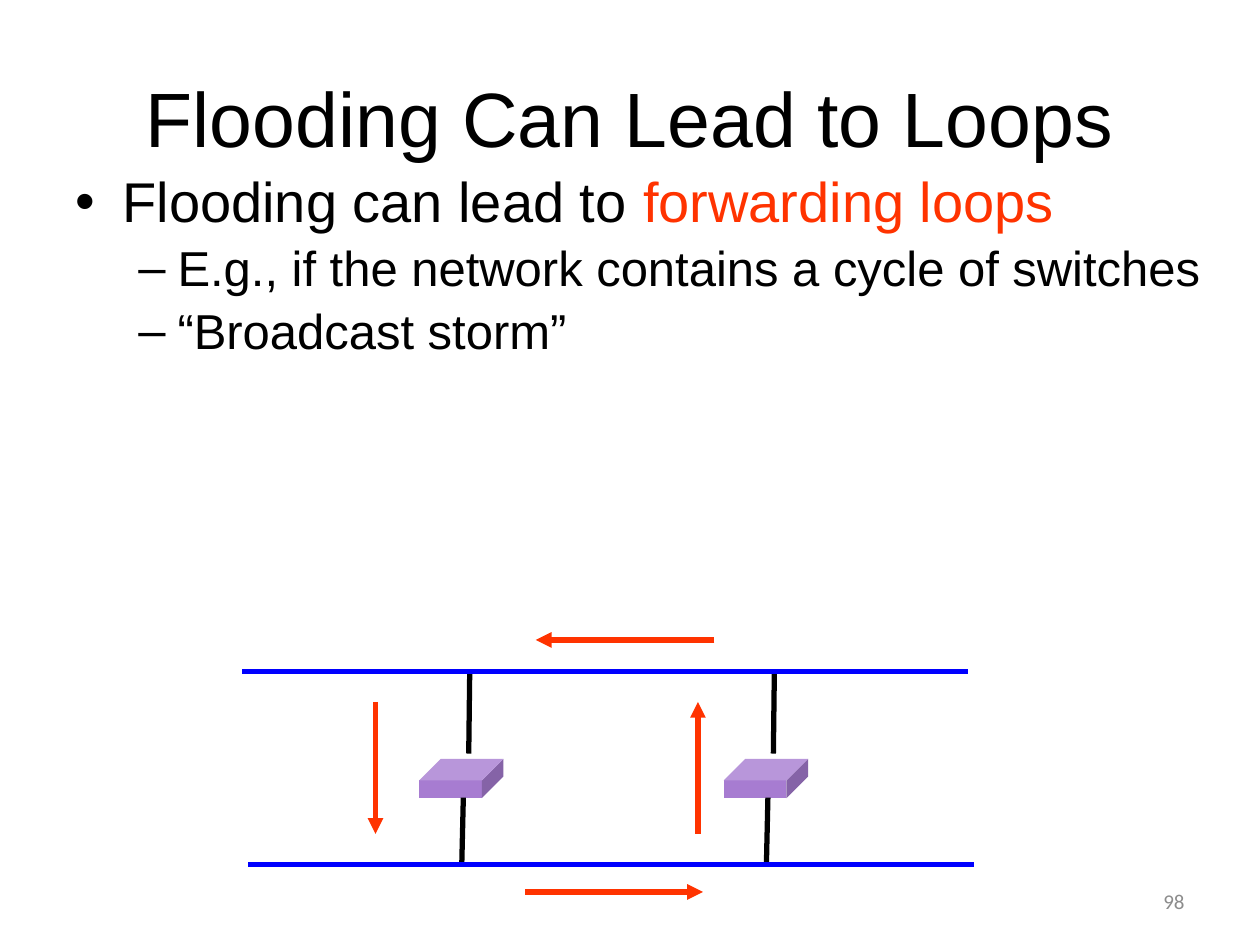
from lxml import etree
from pptx import Presentation, util as u
from pptx.dml.color import RGBColor
from pptx.enum import shapes, text
from pptx.oxml import ns

RED, BLUE, BLACK = "FF3300", "0000FF", "000000"


def paint(font, tint, size, name="Arial"):
    font.color.rgb = RGBColor.from_string(tint)
    font.size = u.Pt(size)
    font.name = name


def draw(x1, y1, x2, y2, tint, arrow=False):
    """Draw a 3 pt line between two points in cm, with an optional arrowhead."""
    line = slide.shapes.add_connector(
        shapes.MSO_CONNECTOR.STRAIGHT, u.Cm(x1), u.Cm(y1), u.Cm(x2), u.Cm(y2))
    line.line.color.rgb = RGBColor.from_string(tint)
    line.line.width = u.Pt(3)
    if arrow:
        etree.SubElement(line.line._get_or_add_ln(), ns.qn("a:tailEnd"), type="triangle")
    etree.SubElement(line._element.spPr, ns.qn("a:effectLst"))


deck = Presentation()
deck.slide_width, deck.slide_height = u.Cm(25.4), u.Cm(19.05)
slide = deck.slides.add_slide(deck.slide_layouts[6])

# Title and page number
labels = [
    ("Flooding Can Lead to Loops", (1.27, 0.76, 22.86, 3.18),
     text.PP_ALIGN.CENTER, BLACK, 44, "Arial"),
    ("98", (18.21, 17.65, 5.92, 1.02), text.PP_ALIGN.RIGHT, "8C8C8C", 12, "Calibri"),
]
for words, spot, align, tint, size, face in labels:
    frame = slide.shapes.add_textbox(*map(u.Cm, spot)).text_frame
    frame.word_wrap = True
    frame.vertical_anchor = text.MSO_ANCHOR.MIDDLE
    frame.text = words
    para = frame.paragraphs[0]
    para.alignment = align
    paint(para.runs[0].font, tint, size, face)

# Bulleted text: level, indent and hang in cm, mark, size, runs
points = [
    (0, 0.95, 0.95, "•", 32, [("Flooding can lead to ", BLACK), ("forwarding loops", RED)]),
    (1, 2.06, 0.79, "–", 28, [("E.g., if the network contains a cycle of switches", BLACK)]),
    (1, 2.06, 0.79, "–", 28, [("“Broadcast storm”", BLACK)]),
]
frame = slide.shapes.add_textbox(u.Cm(1.27), u.Cm(3.38), u.Cm(23.5), u.Cm(9.09)).text_frame
frame.word_wrap = True
for i, (level, left, hang, mark, size, parts) in enumerate(points):
    para = frame.add_paragraph() if i else frame.paragraphs[0]
    para.level = level
    para.line_spacing = 0.9
    para.space_before = u.Pt(0.2 * size)
    props = para._p.get_or_add_pPr()
    props.set("marL", str(u.Cm(left)))
    props.set("indent", str(-u.Cm(hang)))
    etree.SubElement(props, ns.qn("a:buFont"), typeface="Arial")
    etree.SubElement(props, ns.qn("a:buChar"), char=mark)
    for words, tint in parts:
        run = para.add_run()
        run.text = words
        paint(run.font, tint, size)

# Two switches, each wired to both networks
top, base = 13.54, 17.42
for x in (8.45, 14.59):
    box = slide.shapes.add_shape(
        shapes.MSO_SHAPE.CUBE, u.Cm(x), u.Cm(15.3), u.Cm(1.7), u.Cm(0.79))
    box.adjustments[0] = 0.55
    box.shadow.inherit = False
    box.fill.solid()
    box.fill.fore_color.rgb = RGBColor.from_string("A77CD1")
    box.line.fill.background()
    draw(x + 1.02, top, x + 1, 15.19, BLACK)
    draw(x + 0.89, 16.08, x + 0.86, base, BLACK)

# Networks
draw(4.88, top, 19.51, top, BLUE)
draw(5, base, 19.63, base, BLUE)

# Frames going round the loop
for ends in [(7.57, 14.15, 7.57, 16.81), (14.07, 16.81, 14.07, 14.15),
             (10.59, 17.98, 14.17, 17.98), (14.4, 12.9, 10.8, 12.9)]:
    draw(*ends, RED, arrow=True)

deck.save("out.pptx")
